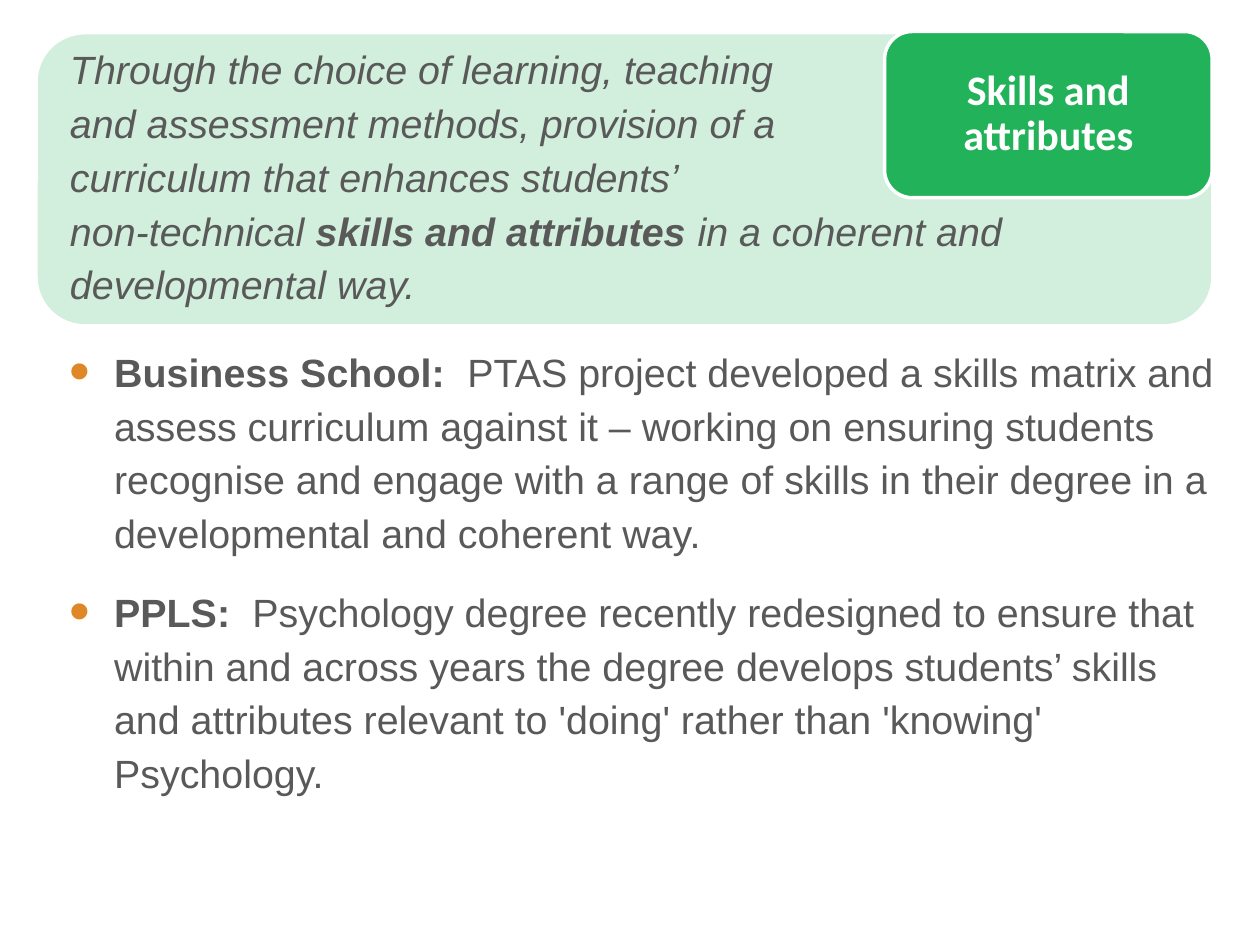
from pptx import Presentation
from pptx.dml.color import RGBColor
from pptx.enum.shapes import MSO_SHAPE
from pptx.enum.text import MSO_ANCHOR, PP_ALIGN
from pptx.util import Pt
from lxml.etree import SubElement
from pptx.oxml.ns import qn

GREEN, WHITE, GREY, ORANGE = "22B259", "FFFFFF", "595959", "DF8626"


def color(code):
    return RGBColor.from_string(code)


def add_card(slide, box, alpha=None):
    """Rounded green box with a white edge; alpha is opacity in percent."""
    card = slide.shapes.add_shape(MSO_SHAPE.ROUNDED_RECTANGLE, *map(Pt, box))
    card.shadow.inherit = False
    card.fill.solid()
    card.fill.fore_color.rgb = color(GREEN)
    card.line.color.rgb = color(WHITE)
    card.line.width = Pt(2)
    if alpha:
        tint = card._element.spPr.find(qn("a:solidFill"))[0]
        SubElement(tint, qn("a:alpha"), val=str(alpha * 1000))
    return card


def set_frame(shape):
    frame = shape.text_frame
    frame.word_wrap = True
    frame.margin_left = frame.margin_right = Pt(5)
    frame.margin_top = frame.margin_bottom = Pt(5)
    return frame


def add_runs(para, parts, italic=False):
    """Fill a paragraph from (text, bold) pairs; a newline breaks the line."""
    para.line_spacing = 1.14
    para.space_before = Pt(14)
    for text, bold in parts:
        for i, line in enumerate(text.split("\n")):
            if i:
                para.add_line_break()
            run = para.add_run()
            run.text = line
            font = run.font
            font.name, font.size = "Arial", Pt(22.5)
            font.bold, font.italic = bold, italic
            font.color.rgb = color(GREY)


def add_quote(slide, box, parts):
    frame = set_frame(slide.shapes.add_textbox(*map(Pt, box)))
    para = frame.paragraphs[0]
    add_runs(para, parts, italic=True)
    para._p.get_or_add_pPr().set("marL", str(Pt(14.4)))


def add_bullet(para):
    props = para._p.get_or_add_pPr()
    props.set("marL", str(Pt(39.6)))
    props.set("indent", str(Pt(-25.2)))
    tint = SubElement(props, qn("a:buClr"))
    SubElement(tint, qn("a:srgbClr"), val=ORANGE)
    SubElement(props, qn("a:buSzPct"), val="150000")
    SubElement(props, qn("a:buFont"), typeface="Arial")
    SubElement(props, qn("a:buChar"), char="•")


def add_list(slide, box, items):
    frame = set_frame(slide.shapes.add_textbox(*map(Pt, box)))
    for i, (head, text) in enumerate(items):
        para = frame.add_paragraph() if i else frame.paragraphs[0]
        add_runs(para, [(head, True), (text, False)])
        add_bullet(para)


def add_badge(slide, box, text):
    frame = set_frame(add_card(slide, box))
    frame.vertical_anchor = MSO_ANCHOR.MIDDLE
    frame.text = text
    para = frame.paragraphs[0]
    para.alignment = PP_ALIGN.CENTER
    para.line_spacing = 0.9
    font = para.runs[0].font
    font.name, font.size, font.bold = "Calibri", Pt(24), True
    font.color.rgb = color(WHITE)


def main():
    deck = Presentation()
    deck.slide_width, deck.slide_height = Pt(720), Pt(540)
    slide = deck.slides.add_slide(deck.slide_layouts[6])
    left = 20.6
    add_card(slide, (left, 18.7, 672.5, 167.5), alpha=20)
    add_quote(slide, (left, 17.3, 491, 95), [
        ("Through the choice of learning, teaching \nand assessment methods, "
         "provision of a curriculum that enhances students’", False)])
    add_list(slide, (left, 190, 680, 278.6), [
        ("Business School:  ",
         "PTAS project developed a skills matrix and assess curriculum "
         "against it – working on ensuring students recognise and engage with "
         "a range of skills in their degree in a developmental and coherent way."),
        ("PPLS:  ",
         "Psychology degree recently redesigned to ensure that within and "
         "across years the degree develops students’ skills and attributes "
         "relevant to 'doing' rather than 'knowing' Psychology.")])
    add_badge(slide, (505.5, 18, 187.2, 95), "Skills and attributes")
    add_quote(slide, (left, 109.4, 670, 67.7), [
        ("non-technical", False), (" skills and attributes ", True),
        ("in a coherent and developmental way.", False)])
    deck.save("out.pptx")


if __name__ == "__main__":
    main()
